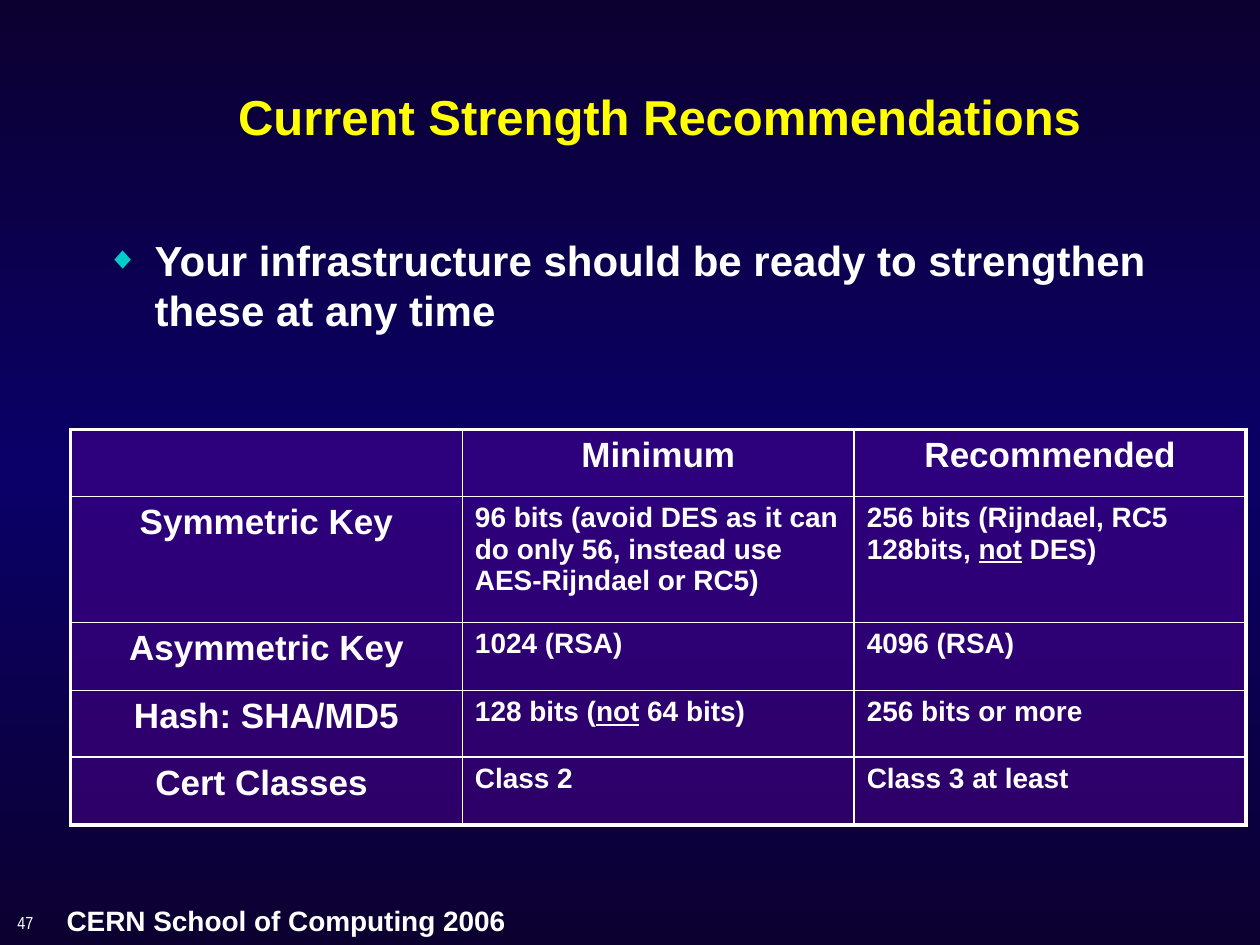
from dataclasses import dataclass

from lxml.etree import SubElement
from pptx import Presentation
from pptx.dml.color import RGBColor
from pptx.enum.text import MSO_ANCHOR as Anchor, PP_ALIGN as Align
from pptx.oxml import parse_xml
from pptx.oxml.ns import nsdecls, qn
from pptx.util import Inches, Pt

WHITE, YELLOW, TEAL, PURPLE = "FFFFFF", "FFFF00", "00CCCC", "500093"
THICK, THIN = 2.25, 1


@dataclass
class Row:
    name: str
    low: str
    high: str
    height: float


# Underscores enclose underlined words
ROWS = [
    Row("", "Minimum", "Recommended", 0.53),
    Row("Symmetric Key",
        "96 bits (avoid DES as it can do only 56, instead use AES-Rijndael or RC5)",
        "256 bits (Rijndael, RC5 128bits, _not_ DES)", 1),
    Row("Asymmetric Key", "1024 (RSA)", "4096 (RSA)", 0.54),
    Row("Hash: SHA/MD5", "128 bits (_not_ 64 bits)", "256 bits or more", 0.53),
    Row("Cert Classes ", "Class 2", "Class 3 at least", 0.54),
]


def color(code: str) -> RGBColor:
    return RGBColor.from_string(code)


def write(frame, text: str, size: float, tint: str = WHITE, font: str = "Arial",
          bold: bool = True, align=Align.LEFT, anchor=Anchor.TOP,
          wrap: bool = True) -> None:
    frame.word_wrap = wrap
    frame.vertical_anchor = anchor
    para = frame.paragraphs[0]
    para.alignment = align
    for i, part in enumerate(text.split("_")):
        run = para.add_run()
        run.text = part
        face = run.font
        face.name, face.size, face.bold = font, Pt(size), bold
        face.color.rgb = color(tint)
        if i % 2:
            face.underline = True


def add_box(slide, left: float, top: float, width: float, height: float):
    box = slide.shapes.add_textbox(Inches(left), Inches(top), Inches(width), Inches(height))
    return box.text_frame


def add_bullet(para, mark: str, tint: str, scale: int) -> None:
    props = para._p.get_or_add_pPr()
    props.set("marL", str(Inches(0.38)))
    props.set("indent", str(-Inches(0.38)))
    SubElement(SubElement(props, qn("a:buClr")), qn("a:srgbClr"), val=tint)
    SubElement(props, qn("a:buSzPct"), val=str(scale * 1000))
    SubElement(props, qn("a:buFont"), typeface="Arial")
    SubElement(props, qn("a:buChar"), char=mark)


def paint(slide, stops: list[tuple[int, str]]) -> None:
    fill = slide.background.fill
    fill.gradient()
    fill.gradient_angle = 270
    group = next(slide.element.iter(qn("a:gsLst")))
    for old in list(group):
        group.remove(old)
    for place, tint in stops:
        stop = SubElement(group, qn("a:gs"), pos=str(place * 1000))
        SubElement(stop, qn("a:srgbClr"), val=tint)


def style_cell(cell, edges: dict[str, float]) -> None:
    cell.fill.solid()
    cell.fill.fore_color.rgb = color(PURPLE)
    props = cell._tc.get_or_add_tcPr()
    SubElement(next(props.iter(qn("a:srgbClr"))), qn("a:alpha"), val="50000")
    for i, (side, width) in enumerate(edges.items()):
        props.insert(i, parse_xml(
            f'<a:ln{side} {nsdecls("a")} w="{Pt(width)}"><a:solidFill>'
            f'<a:srgbClr val="{WHITE}"/></a:solidFill></a:ln{side}>'))


def add_grid(slide, rows: list[Row]) -> None:
    count, col_w = 3, 3.11
    frame = slide.shapes.add_table(
        len(rows), count, Inches(0.56), Inches(3.41),
        Inches(count * col_w), Inches(sum(row.height for row in rows)))
    table = frame.table
    for col in table.columns:
        col.width = Inches(col_w)
    last = len(rows) - 1
    for r, row in enumerate(rows):
        table.rows[r].height = Inches(row.height)
        for c, text in enumerate((row.name, row.low, row.high)):
            cell = table.cell(r, c)
            head = r == 0 or c == 0
            if text:
                write(cell.text_frame, text, 20 if head else 16,
                      align=Align.CENTER if head else Align.LEFT)
            # Outer edges are thick, inner ones thin
            outer = {"L": c == 0, "R": c == count - 1, "T": r == 0, "B": r == last}
            style_cell(cell, {k: THICK if v else THIN for k, v in outer.items()})


def main() -> None:
    deck = Presentation()
    deck.slide_width, deck.slide_height = Inches(10), Inches(7.5)
    slide = deck.slides.add_slide(deck.slide_layouts[5])
    paint(slide, [(0, "0C0030"), (50, "0A0067"), (100, "0C0030")])

    # Footer and page number
    write(add_box(slide, 0.43, 7.12, 3.69, 0.37),
          "CERN School of Computing 2006", 16, wrap=False)
    write(add_box(slide, 0.04, 7.16, 2.08, 0.33), "47", 10,
          font="Arial Narrow", bold=False, anchor=Anchor.MIDDLE)

    # Title
    title = slide.shapes.title
    title.left, title.top = Inches(1.79), Inches(0.22)
    title.width, title.height = Inches(8.21), Inches(1.4)
    write(title.text_frame, "Current Strength Recommendations", 28, YELLOW,
          anchor=Anchor.MIDDLE)

    # Main point
    body = add_box(slide, 0.75, 1.81, 8.5, 4.86)
    add_bullet(body.paragraphs[0], "◆", TEAL, 75)
    write(body, "Your infrastructure should be ready to strengthen these at any time", 24)

    # Key strengths
    add_grid(slide, ROWS)
    deck.save("out.pptx")


if __name__ == "__main__":
    main()
